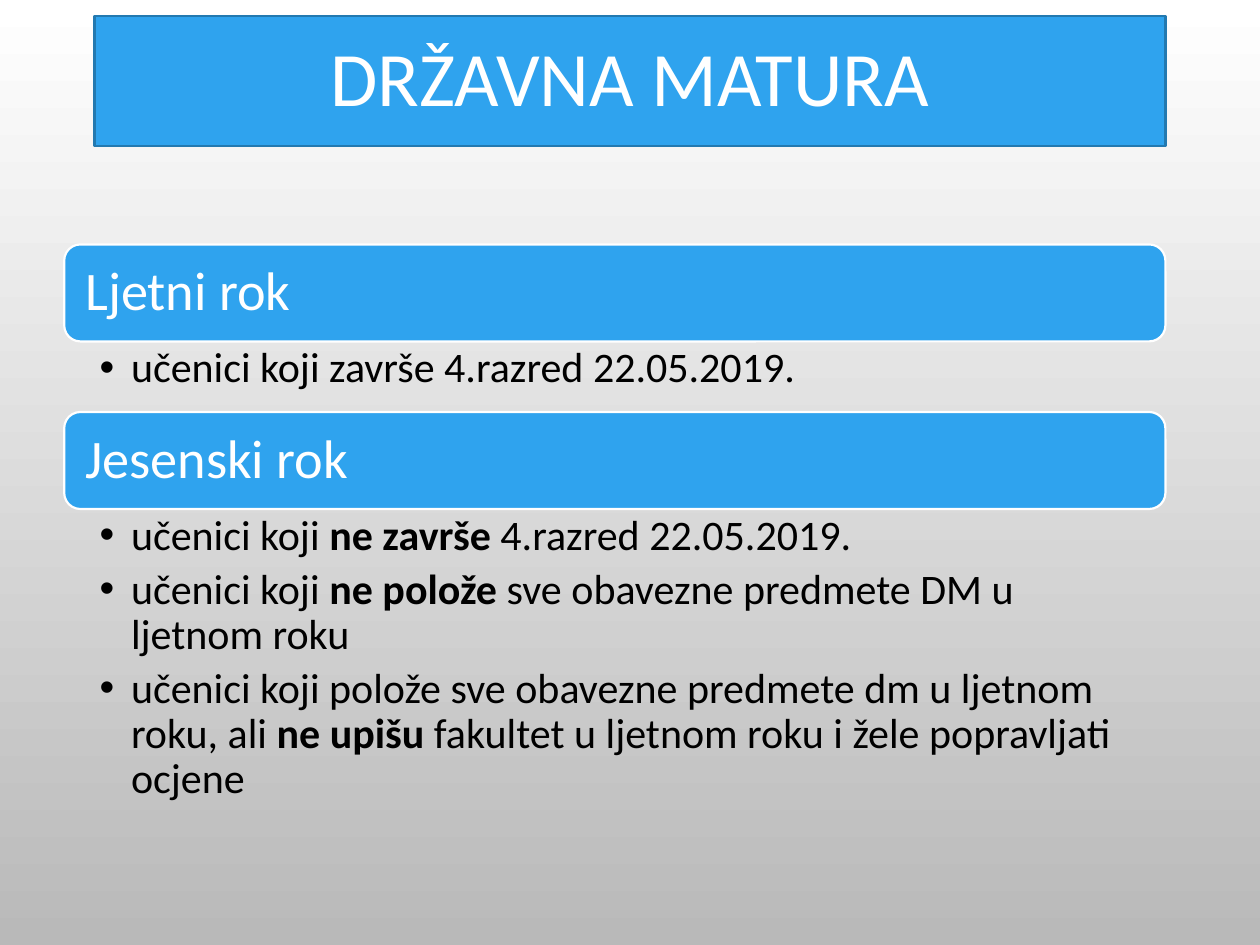
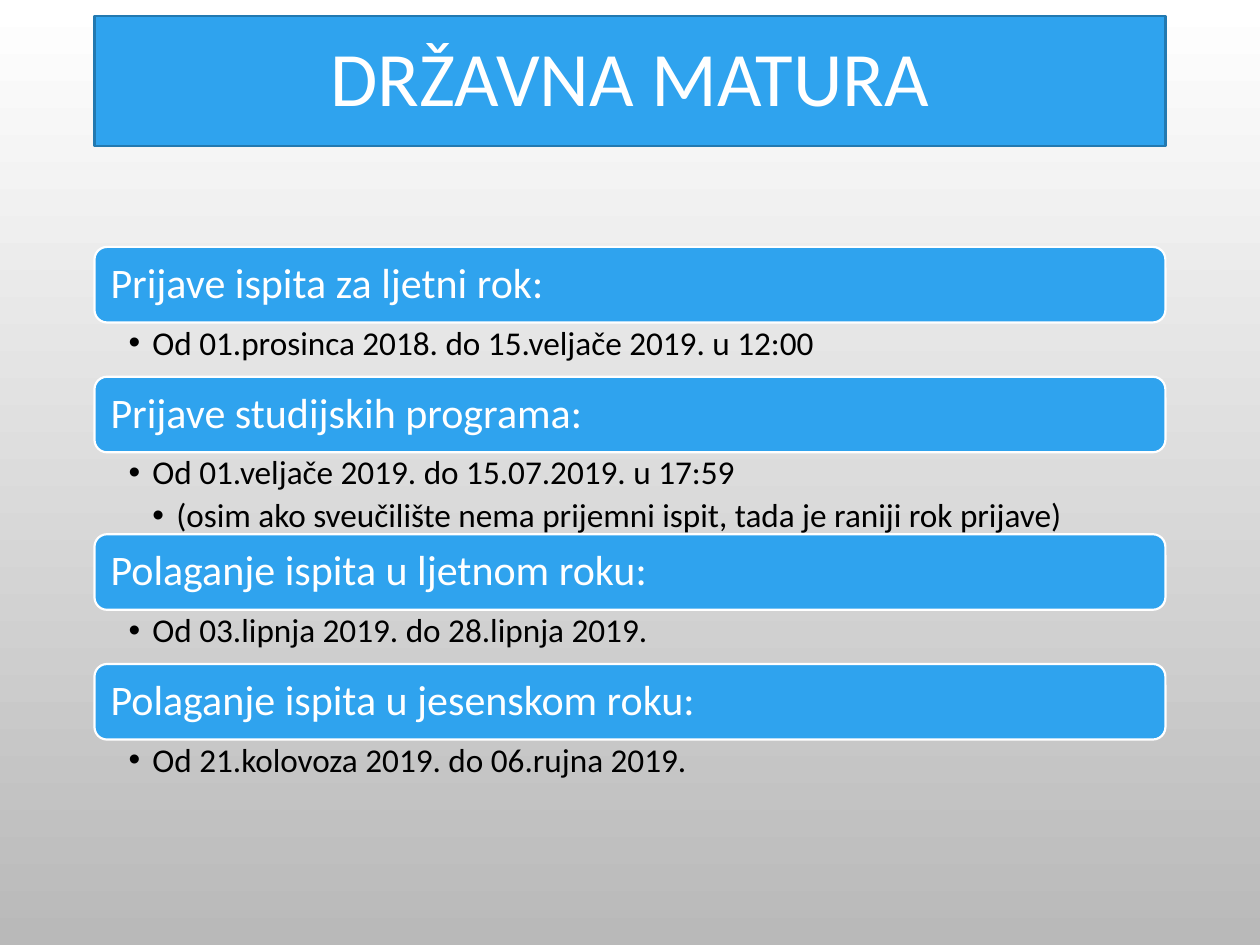
from lxml import etree
from pptx import Presentation
from pptx.dml.color import RGBColor
from pptx.enum.shapes import MSO_SHAPE
from pptx.enum.text import MSO_ANCHOR, MSO_AUTO_SIZE, PP_ALIGN
from pptx.oxml.ns import qn
from pptx.util import Inches, Pt

ROUND = MSO_SHAPE.ROUNDED_RECTANGLE
TOP, MIDDLE = MSO_ANCHOR.TOP, MSO_ANCHOR.MIDDLE
LEFT, CENTER = PP_ALIGN.LEFT, PP_ALIGN.CENTER
NO_FIT = MSO_AUTO_SIZE.NONE

FONT = "Calibri"
COLORS = {"blue": "2FA3EE", "edge": "2379B0", "white": "FFFFFF",
          "gray": "B9B9B9", "black": "000000"}
TITLE = "DRŽAVNA MATURA"
TITLE_BOX = (0.75, 0.13, 8.5, 1.03)

TERMS = [
    ("Ljetni rok", 0.56, [
        (0, [("učenici koji završe 4.razred 22.05.2019.", False)]),
    ]),
    ("Jesenski rok", 2.21, [
        (0, [("učenici koji ", False), ("ne završe ", True),
             ("4.razred 22.05.2019.", False)]),
        (0, [("učenici koji ", False), ("ne polože ", True),
             ("sve obavezne predmete DM u ljetnom roku", False)]),
        (0, [("učenici koji polože sve obavezne predmete dm u ljetnom roku, ali ", False),
             ("ne upišu ", True),
             ("fakultet u ljetnom roku i žele popravljati ocjene", False)]),
    ]),
]
DATES = [
    ("Prijave ispita za ljetni rok:", 0.43, [
        (0, [("Od 01.prosinca 2018. do 15.veljače 2019. u 12:00", False)]),
    ]),
    ("Prijave studijskih programa:", 0.65, [
        (0, [("Od 01.veljače 2019. do 15.07.2019. u 17:59", False)]),
        (1, [("(osim ako sveučilište nema prijemni ispit, tada je raniji rok prijave)", False)]),
    ]),
    ("Polaganje ispita u ljetnom roku:", 0.43, [
        (0, [("Od 03.lipnja 2019. do 28.lipnja 2019.", False)]),
    ]),
    ("Polaganje ispita u jesenskom roku:", 0.43, [
        (0, [("Od 21.kolovoza 2019. do 06.rujna 2019.", False)]),
    ]),
]
SLIDES = [
    {"layout": "Two Content", "parts": TERMS, "left": 0.51, "top": 1.94,
     "width": 8.74, "bar": 0.77, "head": 31, "size": 24, "pad": 0.13,
     "inset": (0.28, 0.04, 0.24, 0.04), "step": 0.25},
    {"layout": "Comparison", "parts": DATES, "left": 0.75, "top": 1.96,
     "width": 8.5, "bar": 0.6, "head": 24, "size": 19, "pad": 0.1,
     "inset": (0.27, 0.03, 0.19, 0.03), "step": 0.19},
]


def color(name):
    return RGBColor.from_string(COLORS[name])


def place(shape, box):
    shape.left, shape.top, shape.width, shape.height = map(Inches, box)


def paint(shape, edge):
    shape.fill.solid()
    shape.fill.fore_color.rgb = color("blue")
    shape.line.color.rgb = color(edge)
    shape.line.width = Pt(1.25)


def set_frame(shape, anchor, inset):
    frame = shape.text_frame
    frame.word_wrap = True
    frame.auto_size = NO_FIT
    frame.vertical_anchor = anchor
    (frame.margin_left, frame.margin_top,
     frame.margin_right, frame.margin_bottom) = map(Inches, inset)
    return frame


def write(para, runs, size, tint, align):
    para.alignment = align
    para.line_spacing = 0.9
    para.space_before = Pt(0)
    for text, bold in runs:
        run = para.add_run()
        run.text = text
        font = run.font
        font.name, font.size, font.bold = FONT, Pt(size), bold
        font.color.rgb = color(tint)


def add_title(slide):
    title = slide.shapes.title
    place(title, TITLE_BOX)
    paint(title, "edge")
    frame = set_frame(title, MIDDLE, (0.1, 0.05, 0.1, 0.05))
    write(frame.paragraphs[0], [(TITLE, False)], 44, "white", CENTER)


def add_bar(slide, box, text, look):
    bar = slide.shapes.add_shape(ROUND, *map(Inches, box))
    bar.shadow.inherit = False
    paint(bar, "white")
    frame = set_frame(bar, MIDDLE, [look["pad"]] * 4)
    write(frame.paragraphs[0], [(text, False)], look["head"], "white", LEFT)
    return bar


def add_bullet(para, level, step):
    props = para._p.get_or_add_pPr()
    props.set("marL", str(Inches(step * (level + 1))))
    props.set("indent", str(-Inches(step)))
    etree.SubElement(props, qn("a:buChar")).set("char", "•")
    para.level = level


def fill_list(holder, box, items, look):
    place(holder, box)
    frame = set_frame(holder, TOP, look["inset"])
    for spot, (level, runs) in enumerate(items):
        para = frame.add_paragraph() if spot else frame.paragraphs[0]
        add_bullet(para, level, look["step"])
        para.space_after = Pt(look["size"] * 0.2)
        write(para, runs, look["size"], "black", LEFT)


def add_slide(deck, look):
    slide = deck.slides.add_slide(deck.slide_layouts.get_by_name(look["layout"]))
    add_title(slide)
    holders = [item for item in slide.placeholders if item.placeholder_format.idx]
    left, top, width = look["left"], look["top"], look["width"]
    for holder, (head, height, items) in zip(holders, look["parts"]):
        bar = add_bar(slide, (left, top, width, look["bar"]), head, look)
        holder._element.addprevious(bar._element)
        top += look["bar"]
        fill_list(holder, (left, top, width, height), items, look)
        top += height


def set_back(deck):
    fill = deck.slide_master.background.fill
    fill.gradient()
    fill.gradient_angle = 270
    for stop, name, spot in zip(fill.gradient_stops, ("white", "gray"), (0, 1)):
        stop.color.rgb = color(name)
        stop.position = spot


def main():
    deck = Presentation()
    deck.slide_width, deck.slide_height = Inches(10), Inches(7.5)
    set_back(deck)
    for look in SLIDES:
        add_slide(deck, look)
    deck.save("out.pptx")


if __name__ == "__main__":
    main()
